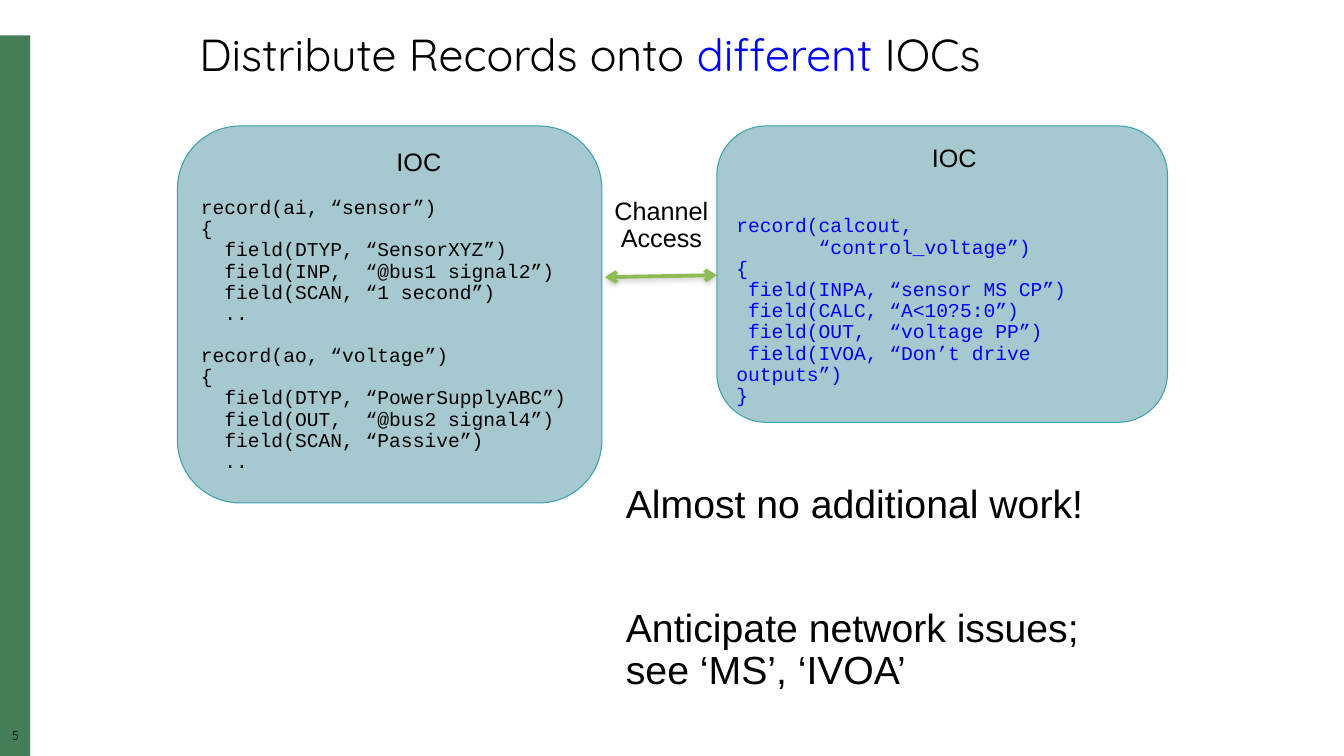
from lxml import etree
from pptx import Presentation
from pptx import util as u
from pptx.dml import color
from pptx.enum import shapes, text
from pptx.oxml import ns

COLORS = {
    "bar": "447E59",
    "box": "A6C9CF",
    "outline": "3BA2AD",
    "arrow": "8FBB55",
    "shadow": "808080",
    "black": "000000",
    "blue": "0000FF",
}
CODE_FONT = "Courier New"
HEADING_INDENT = 1.94

SENSOR_CODE = """record(ai, “sensor”)
{
  field(DTYP, “SensorXYZ”)
  field(INP,  “@bus1 signal2”)
  field(SCAN, “1 second”)
  .."""

VOLTAGE_CODE = """record(ao, “voltage”)
{
  field(DTYP, “PowerSupplyABC”)
  field(OUT,  “@bus2 signal4”)
  field(SCAN, “Passive”)
  .."""

CONTROL_CODE = """record(calcout,
       “control_voltage”)
{
 field(INPA, “sensor MS CP”)
 field(CALC, “A<10?5:0”)
 field(OUT,  “voltage PP”)
 field(IVOA, “Don’t drive outputs”)
}"""


def rgb(name):
    return color.RGBColor.from_string(COLORS[name])


def inches(*lengths):
    return [u.Inches(length) for length in lengths]


def add_text(frame, *parts, size=14, font="Arial", before=0, indent=0,
             align=text.PP_ALIGN.LEFT):
    first = frame.paragraphs[0]
    paragraph = frame.add_paragraph() if first.runs else first
    paragraph.alignment = align
    paragraph.line_spacing = 0.9
    paragraph.space_before = u.Pt(before)
    if indent:
        properties = paragraph._p.get_or_add_pPr()
        properties.set("marL", str(u.Inches(indent)))
        properties.set("indent", "0")
    for words, color_name in parts:
        for number, line in enumerate(words.split("\n")):
            if number:
                paragraph.add_line_break()
            run = paragraph.add_run()
            run.text = line
            run.font.size = u.Pt(size)
            run.font.name = font
            run.font.color.rgb = rgb(color_name)


def set_frame(shape, inset=None, wrap=True):
    frame = shape.text_frame
    frame.word_wrap = wrap
    frame.vertical_anchor = text.MSO_ANCHOR.TOP
    if inset is not None:
        frame.margin_left = frame.margin_right = u.Inches(inset)
        frame.margin_top = frame.margin_bottom = u.Inches(inset)
    return frame


def add_text_box(slide, *place, **options):
    return set_frame(slide.shapes.add_textbox(*inches(*place)), **options)


def add_shape(slide, kind, fill, *place, outline=None):
    shape = slide.shapes.add_shape(kind, *inches(*place))
    shape.shadow.inherit = False
    shape.fill.solid()
    shape.fill.fore_color.rgb = rgb(fill)
    if outline:
        shape.line.color.rgb = rgb(outline)
        shape.line.width = u.Pt(0.75)
    else:
        shape.line.fill.background()
    return shape


def add_ioc(slide, *place, codes, color_name, gap):
    box = add_shape(slide, shapes.MSO_SHAPE.ROUNDED_RECTANGLE, "box", *place,
                    outline="outline")
    frame = set_frame(box, inset=0.05)
    add_text(frame, ("IOC", "black"), size=18, indent=HEADING_INDENT)
    for code in codes:
        add_text(frame, (code, color_name), font=CODE_FONT, before=gap)


def add_double_arrow(slide, *ends):
    arrow = slide.shapes.add_connector(shapes.MSO_CONNECTOR.STRAIGHT, *inches(*ends))
    arrow.line.color.rgb = rgb("arrow")
    arrow.line.width = u.Pt(2.75)
    line = arrow.line._get_or_add_ln()
    for end in ("a:headEnd", "a:tailEnd"):
        etree.SubElement(line, ns.qn(end), type="arrow")
    effects = etree.SubElement(arrow._element.spPr, ns.qn("a:effectLst"))
    shadow = etree.SubElement(effects, ns.qn("a:outerShdw"), blurRad=str(u.Pt(4)),
                              dist=str(u.Pt(1.6)), dir="5400000", rotWithShape="0")
    tint = etree.SubElement(shadow, ns.qn("a:srgbClr"), val=COLORS["shadow"])
    etree.SubElement(tint, ns.qn("a:alpha"), val="42000")


def main():
    presentation = Presentation()
    presentation.slide_width, presentation.slide_height = inches(13.33, 7.5)
    slide = presentation.slides.add_slide(presentation.slide_layouts[6])

    add_shape(slide, shapes.MSO_SHAPE.RECTANGLE, "bar", 0, 0.35, 0.3, 7.15)
    page = add_text_box(slide, 0, 7.24, 0.31, 0.17, inset=0)
    add_text(page, ("5", "black"), size=9, font="Quicksand",
             align=text.PP_ALIGN.CENTER)

    title = add_text_box(slide, 1.88, 0.28, 9.44, 0.59)
    add_text(title, ("Distribute Records onto ", "black"), ("different", "blue"),
             (" IOCs", "black"), size=32, font="Quicksand")

    add_ioc(slide, 7.11, 1.25, 4.47, 2.94, codes=[CONTROL_CODE],
            color_name="blue", gap=31)
    add_ioc(slide, 1.76, 1.25, 4.21, 3.74, codes=[SENSOR_CODE, VOLTAGE_CODE],
            color_name="black", gap=15)

    add_double_arrow(slide, 6, 2.75, 7.11, 2.73)
    channel = add_text_box(slide, 5.99, 1.92, 1.14, 0.65, wrap=False)
    add_text(channel, ("Channel\nAccess", "black"), size=18,
             align=text.PP_ALIGN.CENTER)

    remarks = add_text_box(slide, 6.11, 4.76, 5.56, 2.74)
    add_text(remarks, ("Almost no additional work!", "black"), size=28)
    add_text(remarks, ("Anticipate network issues;\nsee ‘MS’, ‘IVOA’", "black"),
             size=28, before=58)

    presentation.save("out.pptx")


if __name__ == "__main__":
    main()
